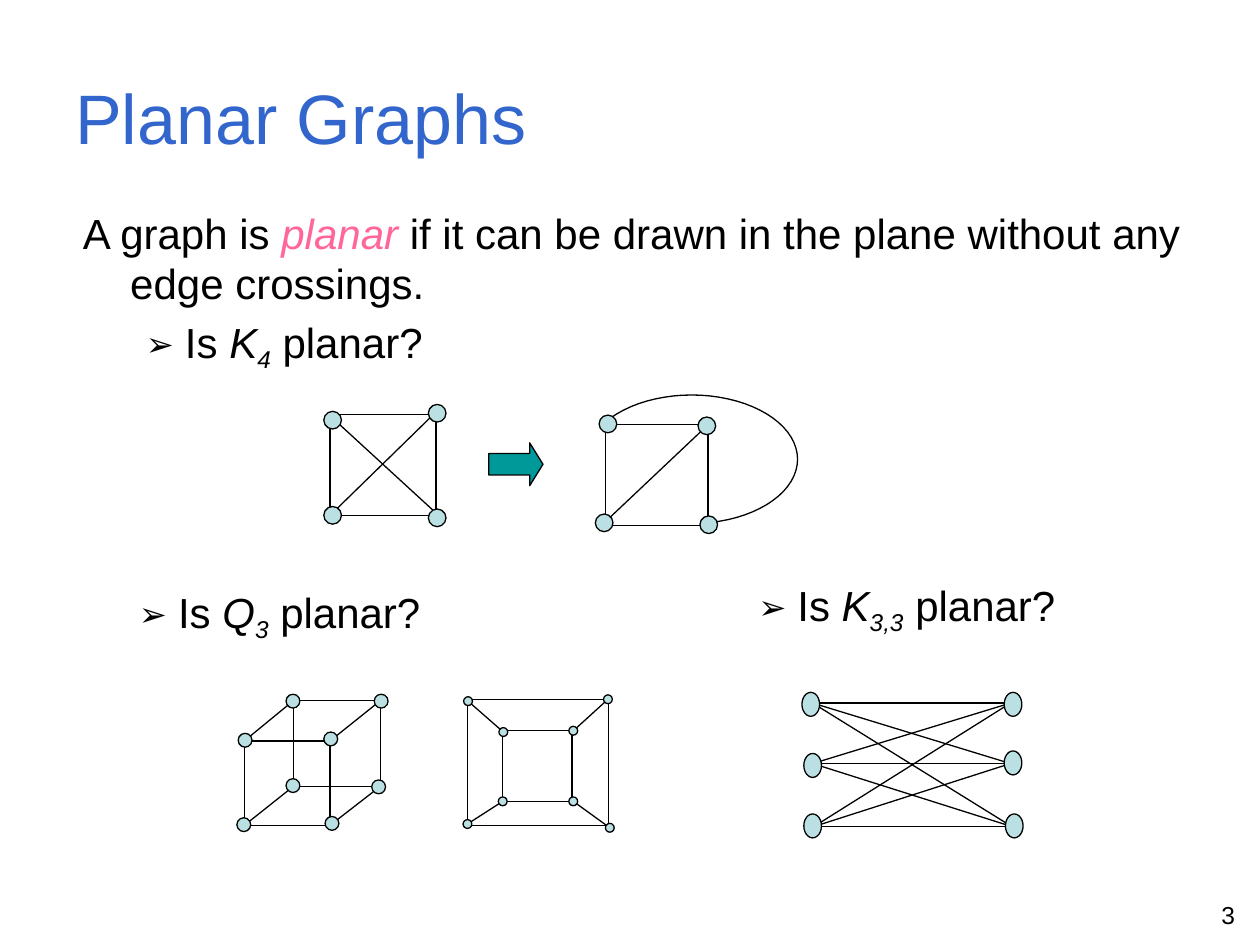
from math import cos, radians, sin

from lxml.etree import SubElement
from pptx import Presentation
from pptx.dml.color import RGBColor
from pptx.enum.shapes import MSO_CONNECTOR as Connector, MSO_SHAPE as Shape
from pptx.enum.text import MSO_ANCHOR as Anchor, PP_ALIGN as Align
from pptx.oxml.ns import qn
from pptx.util import Inches, Pt

THEME = {
    "font": "Arial", "title_size": 40, "body_size": 24, "number_size": 14,
    "title": "3366CC", "ink": "000000", "accent": "FF6699",
    "node": "BBE0E3", "arrow": "009999", "line": 0.75,
}

# The slide is a grid of 100 columns by 75 rows; every length counts cells.
COLUMNS, ROWS = 100, 75
CELL = Inches(10) // COLUMNS

# A run is (text, style), where style is "", "accent", "italic" or "sub".
DEFINITION = [("A graph is ", ""), ("planar", "accent"),
              (" if it can be drawn in the plane without any edge crossings.", "")]


def question(letter, index):
    return [("Is ", ""), (letter, "italic"), (index, "sub"), (" planar?", "")]


# Each text block: box, then paragraphs as (runs, is bulleted).
BODY = [
    ((5.6, 15.95, 90.1, 14.2), [(DEFINITION, False), (question("K", "4"), True)]),
    ((5.05, 46.05, 30.6, 5.5), [(question("Q", "3"), True)]),
    ((54.2, 45.5, 33.8, 6.3), [(question("K", "3,3"), True)]),
]

# Nodes are centres; edges are pairs of indexes into ends, or into nodes without ends.
# Frames are rectangles of edges.
GRAPHS = {
    "K4 crossing": {
        "size": (1.4, 1.4),
        "nodes": [(26.4, 33.35), (26.4, 40.9), (34.7, 41.1), (34.7, 32.8)],
        "ends": [(26.2, 33), (26.1, 41), (34.7, 40.8), (34.5, 32.8)],
        "frames": [(26.2, 32.9, 8.4, 8)],
        "edges": [(0, 2), (1, 3)],
    },
    "K4 planar": {
        "size": (1.4, 1.4),
        "nodes": [(48.25, 33.65), (47.95, 41.5), (56.25, 41.65), (56.1, 33.8)],
        "frames": [(48.05, 33.7, 8.15, 8)],
        "edges": [(1, 3)],
        "arc": {"centre": (54.9, 36.45), "radii": (8.4, 5.1), "angles": (215, 440)},
    },
    "Q3 cube": {
        "size": (1.1, 1.1),
        "nodes": [(19.35, 65.45), (19.45, 58.75), (26.25, 58.65), (26.35, 65.35),
                  (23.25, 62.35), (23.25, 55.65), (30.25, 55.65), (30.05, 62.45)],
        "ends": [(19.4, 65.5), (19.4, 58.8), (26.2, 58.8), (26.2, 65.5),
                 (23.3, 62.4), (23.3, 55.6), (30.2, 55.6), (30.2, 62.4)],
        "edges": [(first, second) for face in (0, 4) for first, second in
                  ((face, face + 1), (face + 1, face + 2),
                   (face + 2, face + 3), (face + 3, face))]
                 + [(front, front + 4) for front in range(4)],
    },
    "Q3 planar": {
        "size": (0.7, 0.7),
        "nodes": [(37.15, 55.65), (48.25, 55.5), (48.4, 65.7), (37.1, 65.4),
                  (39.95, 58.1), (45.5, 58), (45.5, 63.6), (39.9, 63.6)],
        "frames": [(37.1, 55.5, 11.2, 10), (39.9, 58, 5.5, 5.6)],
        "edges": [(outer, outer + 4) for outer in range(4)],
    },
    "K3,3": {
        "size": (1.4, 1.9),
        "nodes": [(64.35, 55.9), (64.5, 60.75), (64.5, 65.55),
                  (80.4, 55.9), (80.4, 60.55), (80.5, 65.55)],
        "ends": [(64.5, 55.8), (64.5, 60.6), (64.6, 65.6),
                 (80.2, 55.8), (80.2, 60.6), (80.3, 65.6)],
        "edges": [(left, right) for left in range(3) for right in range(3, 6)],
    },
}
ARROW = (38.8, 35.15, 4.3, 3.4)


def cells(*lengths):
    return [round(length * CELL) for length in lengths]


def color(name):
    return RGBColor.from_string(THEME[name])


def outline(item, fill=None):
    """Give a shape the thin ink line, and a fill or none."""
    item.shadow.inherit = False
    item.line.color.rgb = color("ink")
    item.line.width = Pt(THEME["line"])
    if fill:
        item.fill.solid()
        item.fill.fore_color.rgb = color(fill)
    else:
        item.fill.background()


def add_edge(shapes, start, end):
    edge = shapes.add_connector(Connector.STRAIGHT, *cells(*start, *end))
    edge.line.color.rgb = color("ink")
    edge.line.width = Pt(THEME["line"])
    SubElement(edge._element.spPr, qn("a:effectLst"))


def add_arc(shapes, centre, radii, angles):
    points = [cells(centre[0] + radii[0] * cos(radians(angle)),
                    centre[1] + radii[1] * sin(radians(angle)))
              for angle in range(angles[0], angles[1] + 1, 5)]
    builder = shapes.build_freeform(*points[0])
    builder.add_line_segments(points[1:], close=False)
    outline(builder.convert_to_shape())


def add_graph(page, graph):
    shapes = page.shapes.add_group_shape().shapes
    nodes = graph["nodes"]
    ends = graph.get("ends", nodes)
    for frame in graph.get("frames", []):
        outline(shapes.add_shape(Shape.RECTANGLE, *cells(*frame)))
    for first, second in graph["edges"]:
        add_edge(shapes, ends[first], ends[second])
    if "arc" in graph:
        add_arc(shapes, **graph["arc"])
    width, height = graph["size"]
    for x, y in nodes:
        box = cells(x - width / 2, y - height / 2, width, height)
        outline(shapes.add_shape(Shape.OVAL, *box), "node")


def add_frame(page, box):
    frame = page.shapes.add_textbox(*cells(*box)).text_frame
    frame.word_wrap = True
    return frame


def style_font(font, size, ink="ink"):
    font.name, font.size = THEME["font"], Pt(THEME[size])
    font.color.rgb = color(ink)


def add_label(page, box, text, size, ink="ink", align=Align.LEFT, anchor=Anchor.TOP):
    frame = add_frame(page, box)
    frame.text, frame.vertical_anchor = text, anchor
    para = frame.paragraphs[0]
    para.alignment = align
    style_font(para.runs[0].font, size, ink)


def fill_paragraph(para, runs, bulleted):
    para.space_before = Pt(THEME["body_size"] * 0.2)
    properties = para._p.get_or_add_pPr()
    margin, hanging = cells(8.1, 3.1) if bulleted else cells(3.75, 3.75)
    properties.set("marL", str(margin))
    properties.set("indent", str(-hanging))
    if bulleted:
        para.level = 1
        SubElement(properties, qn("a:buSzPct"), val="80000")
        SubElement(properties, qn("a:buFont"), typeface=THEME["font"])
        SubElement(properties, qn("a:buChar"), char="➢")
    for text, style in runs:
        span = para.add_run()
        span.text = text
        style_font(span.font, "body_size", "accent" if style == "accent" else "ink")
        span.font.italic = bool(style)
        if style == "sub":
            span._r.get_or_add_rPr().set("baseline", "-25000")


def main():
    deck = Presentation()
    deck.slide_width, deck.slide_height = COLUMNS * CELL, ROWS * CELL
    page = deck.slides.add_slide(deck.slide_layouts[6])
    add_label(page, (75.7, 70.9, 23.3, 3.1), "3", "number_size", align=Align.RIGHT)
    add_label(page, (5, 3, 90, 12.5), "Planar Graphs", "title_size", "title",
              anchor=Anchor.MIDDLE)
    for graph in GRAPHS.values():
        add_graph(page, graph)
    arrow = page.shapes.add_shape(Shape.RIGHT_ARROW, *cells(*ARROW))
    arrow.adjustments[1] = 0.31
    outline(arrow, "arrow")
    for box, paragraphs in BODY:
        frame = add_frame(page, box)
        for index, (runs, bulleted) in enumerate(paragraphs):
            para = frame.add_paragraph() if index else frame.paragraphs[0]
            fill_paragraph(para, runs, bulleted)
    deck.save("out.pptx")


if __name__ == "__main__":
    main()
